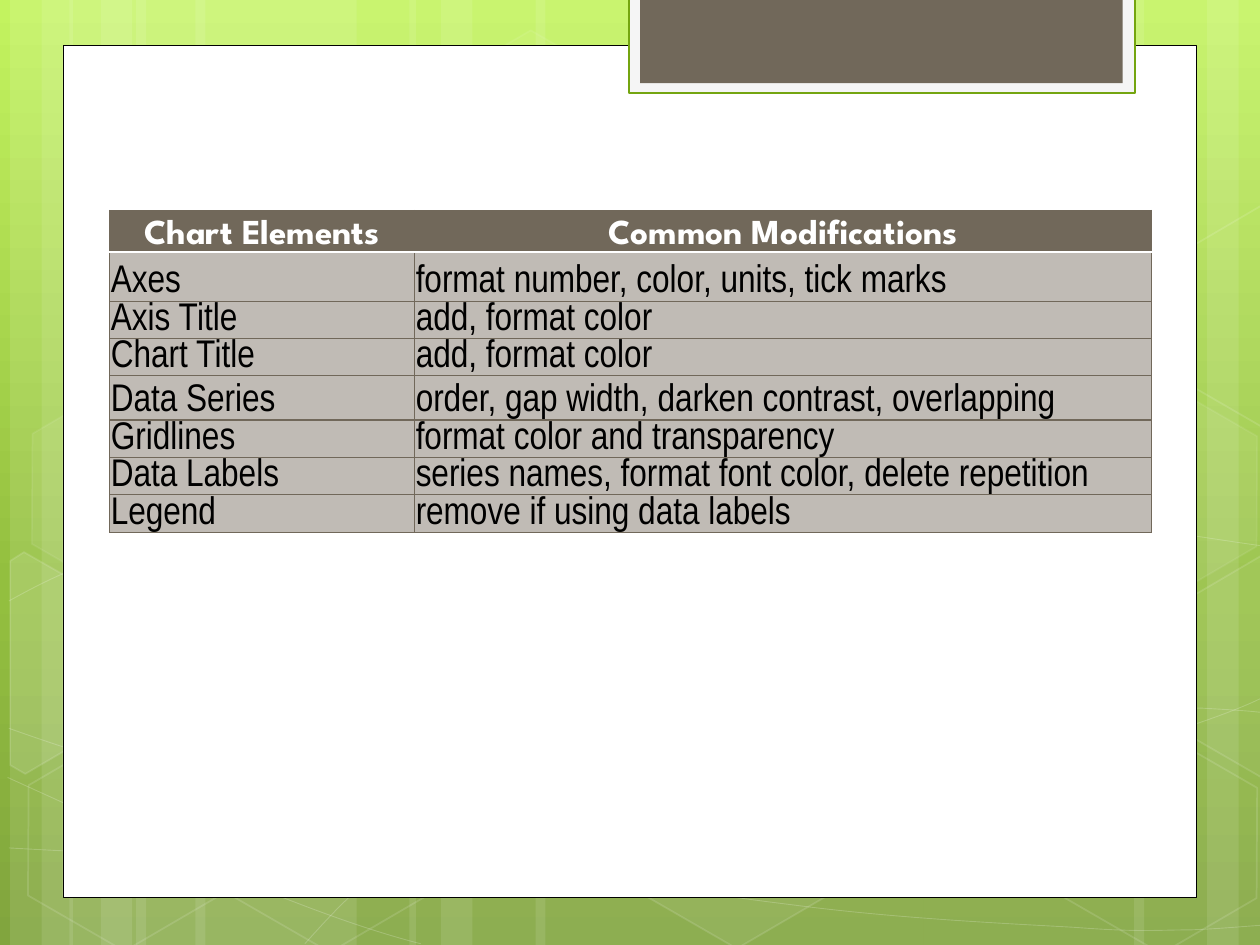
"""Builds a slide with a table of chart elements and their common modifications."""
import math
from copy import deepcopy
from dataclasses import dataclass

from lxml import etree
from pptx import Presentation
from pptx import util as u
from pptx.dml.color import RGBColor
from pptx.enum import shapes, text
from pptx.oxml import ns


@dataclass(frozen=True)
class Theme:
    white: str = "FFFFFF"
    black: str = "000000"
    taupe: str = "71685A"
    cell: str = "C0BBB5"
    tab: str = "F5F5F5"
    green: str = "74A510"
    backdrop: tuple = ((0, "C3F35F"), (0.62, "93BF3F"), (1, "81A53E"))
    head_font: str = "League Spartan"
    body_font: str = "Arial Narrow"
    head_size: int = 20
    body_size: int = 22


class Deck:
    """Holds the theme and the current slide."""

    def __init__(self, theme):
        self.t = theme
        self.prs = Presentation()
        self.prs.slide_width, self.prs.slide_height = u.Inches(10), u.Inches(7.5)
        self.s = self.prs.slides.add_slide(self.prs.slide_layouts[6])

    def background(self):
        fill = self.s.background.fill
        fill.gradient()
        fill.gradient_angle = 270
        stops = self.s.element.find(".//" + ns.qn("a:gsLst"))
        stops.append(deepcopy(stops[-1]))
        for stop, (position, color) in zip(fill.gradient_stops, self.t.backdrop):
            stop.position = position
            stop.color.rgb = RGBColor.from_string(color)

    def fade(self, sp, *tags, percent):
        color = sp.element.spPr.find("/".join(map(ns.qn, (*tags, "a:solidFill", "a:srgbClr"))))
        etree.SubElement(color, ns.qn("a:alpha"), val=str(percent * 1000))

    def paint(self, sp, fill=None, alpha=None, line=None, width=1, line_alpha=None):
        sp.shadow.inherit = False
        for fmt, color in ((sp.fill, fill), (sp.line.fill, line)):
            if color:
                fmt.solid()
                fmt.fore_color.rgb = RGBColor.from_string(color)
            else:
                fmt.background()
        if line:
            sp.line.width = u.Pt(width)
        if alpha:
            self.fade(sp, percent=alpha)
        if line_alpha:
            self.fade(sp, "a:ln", percent=line_alpha)

    def rect(self, x, y, w, h, rotation=0, **style):
        sp = self.s.shapes.add_shape(shapes.MSO_SHAPE.RECTANGLE, *map(u.Inches, (x, y, w, h)))
        sp.rotation = rotation
        self.paint(sp, **style)

    def hexagon(self, x, y, alpha, line_alpha):
        box = map(u.Inches, (x, y, 1.75, 1.52))
        sp = self.s.shapes.add_shape(shapes.MSO_SHAPE.HEXAGON, *box)
        sp.adjustments[0] = 0.285
        sp.rotation = 30
        self.paint(sp, self.t.white if alpha else None, alpha, self.t.white, 1, line_alpha)

    def outline(self, points, close, **style):
        start, *rest = [(u.Inches(x), u.Inches(y)) for x, y in points]
        fb = self.s.shapes.build_freeform(*start, scale=1)
        fb.add_line_segments(rest, close=close)
        sp = fb.convert_to_shape()
        self.paint(sp, line=self.t.white, **style)
        return sp

    def cut_hexagon(self, center, points, alpha):
        cx, cy = center
        cos, sin = math.cos(math.radians(30)), math.sin(math.radians(30))
        upright = [(cx + (x - cx) * cos + (y - cy) * sin, cy - (x - cx) * sin + (y - cy) * cos)
                   for x, y in points]
        sp = self.outline(upright, True, fill=self.t.white if alpha else None,
                          alpha=alpha, line_alpha=12)
        sp.rotation = 30

    def curve(self, start, *segments):
        points = [start]
        for segment in segments:
            points += zip(segment[::2], segment[1::2])
        sp = self.outline(points, False, width=0.5, line_alpha=20)
        lines = iter(list(sp.element.spPr.iter(ns.qn("a:lnTo"))))
        for segment in segments:
            group = [next(lines) for _ in segment[::2]]
            if len(group) == 3:
                bezier = etree.Element(ns.qn("a:cubicBezTo"))
                group[0].addprevious(bezier)
                for line in group:
                    bezier.append(line[0])
                    line.getparent().remove(line)

    def border(self, cell, side, color, width):
        ln = etree.Element(ns.qn(f"a:ln{side}"), w=str(u.Pt(width)))
        fill = etree.SubElement(ln, ns.qn("a:solidFill"))
        etree.SubElement(fill, ns.qn("a:srgbClr"), val=color)
        cell._tc.get_or_add_tcPr().insert("LRTB".index(side), ln)

    def cell(self, cell, words, row):
        t, head = self.t, row == 0
        margins = dict.fromkeys(("margin_left", "margin_right", "margin_top"), u.Inches(0.01))
        layout = {**margins, "margin_bottom": 0, "vertical_anchor": text.MSO_ANCHOR.BOTTOM}
        for name, value in layout.items():
            setattr(cell, name, value)
        p = cell.text_frame.paragraphs[0]
        p.alignment = text.PP_ALIGN.CENTER if head else text.PP_ALIGN.LEFT
        r = p.add_run()
        r.text = words
        font = {"name": t.head_font if head else t.body_font,
                "size": u.Pt(t.head_size if head else t.body_size), "bold": head}
        for name, value in font.items():
            setattr(r.font, name, value)
        r.font.color.rgb = RGBColor.from_string(t.white if head else t.black)
        cell.fill.solid()
        cell.fill.fore_color.rgb = RGBColor.from_string(t.taupe if head else t.cell)
        for side in "LRTB":
            rule = (row, side) in ((0, "B"), (1, "T"))
            self.border(cell, side, *((t.white, 1.25) if rule else (t.taupe, 0.75)))

    def table(self, x, y, w, h, cols, heights, rows):
        box = map(u.Inches, (x, y, w, h))
        frame = self.s.shapes.add_table(len(rows), len(cols), *box)
        tbl = frame.table
        tbl.horz_banding = False
        for col, width in zip(tbl.columns, cols):
            col.width = u.Inches(width)
        for i, (row, height) in enumerate(zip(tbl.rows, heights)):
            row.height = u.Inches(height)
            for cell, words in zip(row.cells, rows[i]):
                self.cell(cell, words, i)
        frame.height = u.Inches(h)


STRIPES = ((1.08, 1.75), (0.08, 0.5), (0.33, 0.83), (1.55, 1.75), (0.55, 0.5), (0.8, 0.83),
           (7.33, 1.75, 180), (9.58, 0.5, 180), (9, 0.83, 180),
           (4.25, 3.08), (3.25, 0.5), (3.5, 0.83))

CURVES = (
    ((0.07, 6.73), (0.61, 6.76, 1.15, 6.79, 1.9, 6.78), (2.65, 6.77, 3.58, 6.75, 4.58, 6.65),
     (5.58, 6.55, 7, 6.36, 7.92, 6.17), (8.83, 5.98, 9.77, 5.68, 10.07, 5.51)),
    ((0.07, 4.77), (0.36, 4.61, 0.65, 4.46, 1.21, 4.31), (1.78, 4.16, 2.59, 3.94, 3.47, 3.87),
     (4.36, 3.8, 5.44, 3.79, 6.54, 3.87), (7.64, 3.95, 9.47, 4.26, 10.07, 4.34)),
    ((0.06, 6.17), (1.27, 6.72, 2.47, 7.27, 3.34, 7.49)),
    ((0.07, 5.78), (0.38, 5.89, 0.7, 6, 1.28, 6.16), (1.86, 6.31, 2.73, 6.56, 3.57, 6.73),
     (4.4, 6.9, 5.45, 7.08, 6.28, 7.18), (7.11, 7.29, 8, 7.33, 8.53, 7.36),
     (9.05, 7.4, 9.19, 7.38, 9.45, 7.38), (9.71, 7.37, 9.89, 7.35, 10.07, 7.34)),
    ((2.42, 7.49), (2.6, 7.29, 2.78, 7.09, 3.02, 6.91), (3.26, 6.73, 3.6, 6.53, 3.88, 6.39),
     (4.16, 6.25, 4.33, 6.19, 4.7, 6.09), (5.06, 5.99, 5.73, 5.85, 6.08, 5.78),
     (6.44, 5.71, 6.49, 5.71, 6.8, 5.69), (7.11, 5.66, 7.6, 5.63, 7.94, 5.62),
     (8.29, 5.61, 8.86, 5.62, 8.86, 5.62), (9.53, 5.62),
     (9.71, 5.63, 9.88, 5.64, 9.97, 5.65), (10.06, 5.66, 10.03, 5.65, 10.06, 5.66)),
)

HEXAGONS = ((3.34, 0.36, 4, 8), (4.97, 5.89, 6, 12))
CUT_LEFT = ((0.08, 4.45), (0.19, 4.38), (0.96, 4.82), (0.95, 5.7), (0.2, 6.14), (0.08, 6.07))
SIDE_HEXAGONS = ((0.11, 5.91, None, 12), (0.14, 3.12, 7, 8), (1.74, 5.92, None, 12),
                 (7.53, 4.53, 10, 12), (8.34, 5.93, None, 12), (8.34, 3.14, 7, 8))
CUT_RIGHT = ((9.26, 4.85), (10.01, 4.41), (10.09, 4.46), (10.09, 6.13), (10.02, 6.17), (9.26, 5.73))
CUT_TOP = tuple((x, y - 2.78) for x, y in CUT_RIGHT)

ROWS = (
    ("Chart Elements", "Common Modifications"),
    ("Axes", "format number, color, units, tick marks"),
    ("Axis Title", "add, format color"),
    ("Chart Title", "add, format color"),
    ("Data Series", "order, gap width, darken contrast, overlapping"),
    ("Gridlines", "format color and transparency"),
    ("Data Labels", "series names, format font color, delete repetition"),
    ("Legend", "remove if using data labels"),
)

if __name__ == "__main__":
    t = Theme()
    deck = Deck(t)
    deck.background()
    for x, w, *turn in STRIPES:
        deck.rect(x, 0, w, 7.5, *turn, fill=t.white, alpha=10)
    for curve in CURVES:
        deck.curve(*curve)
    for hexagon in HEXAGONS:
        deck.hexagon(*hexagon)
    deck.cut_hexagon((0.36, 5.35), CUT_LEFT, 10)
    for hexagon in SIDE_HEXAGONS:
        deck.hexagon(*hexagon)
    deck.cut_hexagon((9.85, 5.2), CUT_RIGHT, 4)
    deck.cut_hexagon((9.85, 2.41), CUT_TOP, None)
    deck.rect(0.5, 0.36, 9, 6.76, fill=t.white, line=t.black, width=0.5)
    deck.rect(4.99, -0.02, 4.02, 0.76, fill=t.tab, line=t.green, width=1.25)
    deck.rect(5.08, -0.02, 3.83, 0.68, fill=t.taupe)
    deck.table(0.87, 1.67, 8.27, 3.01, (2.42, 5.85),
               (0.33, 0.39, 0.24, 0.24, 0.35, 0.23, 0.25, 0.24), ROWS)
    deck.prs.save("out.pptx")
